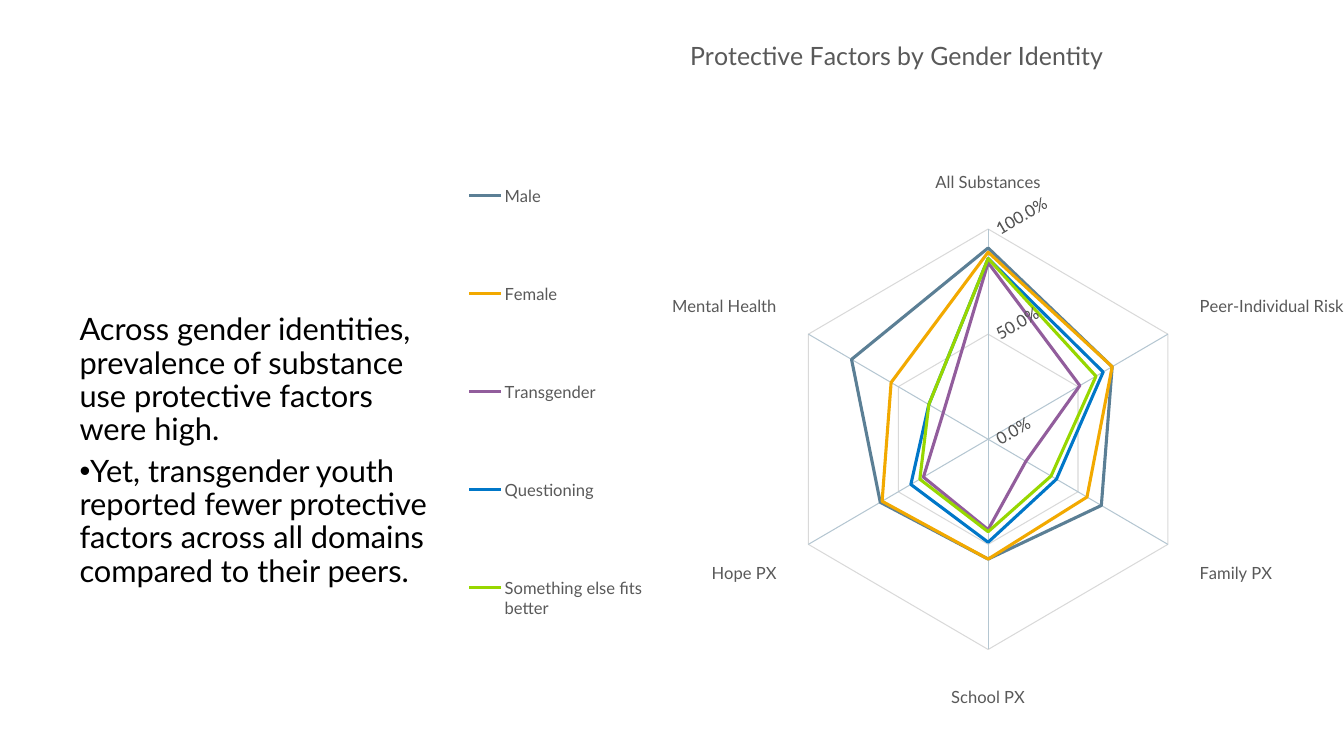
from lxml import etree
from pptx import Presentation
from pptx.chart.data import CategoryChartData
from pptx.dml.color import RGBColor
from pptx.enum.chart import XL_CHART_TYPE, XL_LEGEND_POSITION, XL_TICK_MARK
from pptx.oxml.ns import qn
from pptx.util import Inches, Pt

BLACK = RGBColor(0x00, 0x00, 0x00)
GRAY = RGBColor(0x59, 0x59, 0x59)
GRID = RGBColor(0xD9, 0xD9, 0xD9)
SPOKE = RGBColor(0xB4, 0xC6, 0xD1)
FONT = "Lato"


def set_font(font, size=12, color=GRAY):
    font.name = FONT
    font.size = Pt(size)
    font.bold = False
    font.color.rgb = color


def set_layout(parent, index, **settings):
    for old in parent.findall(qn("c:layout")):
        parent.remove(old)
    layout = etree.Element(qn("c:layout"))
    manual = etree.SubElement(layout, qn("c:manualLayout"))
    for name, value in settings.items():
        etree.SubElement(manual, qn(f"c:{name}")).set("val", str(value))
    parent.insert(index, layout)


prs = Presentation()
prs.slide_width = Inches(13.33)
prs.slide_height = Inches(7.5)
s = prs.slides.add_slide(prs.slide_layouts[6])

tf = s.shapes.add_textbox(Inches(0.69), Inches(3.07), Inches(3.75), Inches(3.73)).text_frame
tf.word_wrap = True
findings = [
    ("Across gender identities, prevalence of substance use protective factors were high.", False),
    ("Yet, transgender youth reported fewer protective factors across all domains compared to their peers.", True),
]
for i, (text, bulleted) in enumerate(findings):
    p = tf.paragraphs[0] if i == 0 else tf.add_paragraph()
    p.line_spacing = 0.9
    p.space_after = Pt(6)
    if bulleted:
        pPr = p._p.get_or_add_pPr()
        pPr.set("marL", "0")
        pPr.set("indent", str(-Inches(0.25)))
        etree.SubElement(pPr, qn("a:buFont")).set("typeface", "Arial")
        etree.SubElement(pPr, qn("a:buChar")).set("char", "•")
    r = p.add_run()
    r.text = text
    set_font(r.font, size=22, color=BLACK)

groups = [
    ("Male", (0.91, 0.69, 0.63, 0.57, 0.6, 0.76), RGBColor(0x5B, 0x7F, 0x95)),
    ("Female", (0.89, 0.69, 0.55, 0.57, 0.59, 0.54), RGBColor(0xF2, 0xA9, 0x00)),
    ("Transgender", (0.84, 0.51, 0.21, 0.43, 0.36, 0.25), RGBColor(0x92, 0x5D, 0x9C)),
    ("Questioning", (0.86, 0.64, 0.38, 0.49, 0.43, 0.33), RGBColor(0x00, 0x77, 0xC8)),
    ("Something else fits better", (0.86, 0.6, 0.35, 0.44, 0.38, 0.33), RGBColor(0x97, 0xD7, 0x00)),
]
data = CategoryChartData(number_format="0.0%")
data.categories = ["All Substances", "Peer-Individual Risk", "Family PX",
                   "School PX", "Hope PX", "Mental Health"]
for name, values, color in groups:
    data.add_series(name, values)
chart = s.shapes.add_chart(XL_CHART_TYPE.RADAR, Inches(4.64), Inches(0.02),
                           Inches(8.69), Inches(7.48), data).chart
set_font(chart.font, size=10, color=BLACK)
chart.plots[0].vary_by_categories = False
for series, (name, values, color) in zip(chart.plots[0].series, groups):
    series.smooth = False
    series.format.line.color.rgb = color
    series.format.line.width = Pt(2.25)

chart.has_title = True
title = chart.chart_title
title.include_in_layout = False
p = title.text_frame.paragraphs[0]
r = p.add_run()
r.text = "Protective Factors by Gender Identity"
set_font(r.font, size=18)
set_layout(title._element, 1, xMode="edge", yMode="edge", x=0.25, y=0.04)

chart.has_legend = True
legend = chart.legend
legend.position = XL_LEGEND_POSITION.TOP
legend.include_in_layout = False
set_font(legend.font)
set_layout(legend._element, 1, xMode="edge", yMode="edge", x=0.0, y=0.14, w=0.2, h=0.78)

for axis, line_color in ((chart.category_axis, GRID), (chart.value_axis, SPOKE)):
    axis.major_tick_mark = XL_TICK_MARK.NONE
    axis.minor_tick_mark = XL_TICK_MARK.NONE
    axis.has_major_gridlines = True
    axis.major_gridlines.format.line.color.rgb = GRID
    axis.major_gridlines.format.line.width = Pt(0.75)
    axis.format.line.color.rgb = line_color
    axis.format.line.width = Pt(0.75)
    set_font(axis.tick_labels.font)

value_axis = chart.value_axis
value_axis.minimum_scale = 0
value_axis.maximum_scale = 1
value_axis.major_unit = 0.5
value_axis.tick_labels.number_format = "0.0%"
value_axis.tick_labels.number_format_is_linked = False
value_axis._element.find(qn("c:txPr")).find(qn("a:bodyPr")).set("rot", str(-30 * 60000))

plot_area = chart._chartSpace.chart.plotArea
set_layout(plot_area, 0, layoutTarget="inner", xMode="edge", yMode="edge",
           x=0.36, y=0.21, w=0.48, h=0.74)

prs.save("out.pptx")
